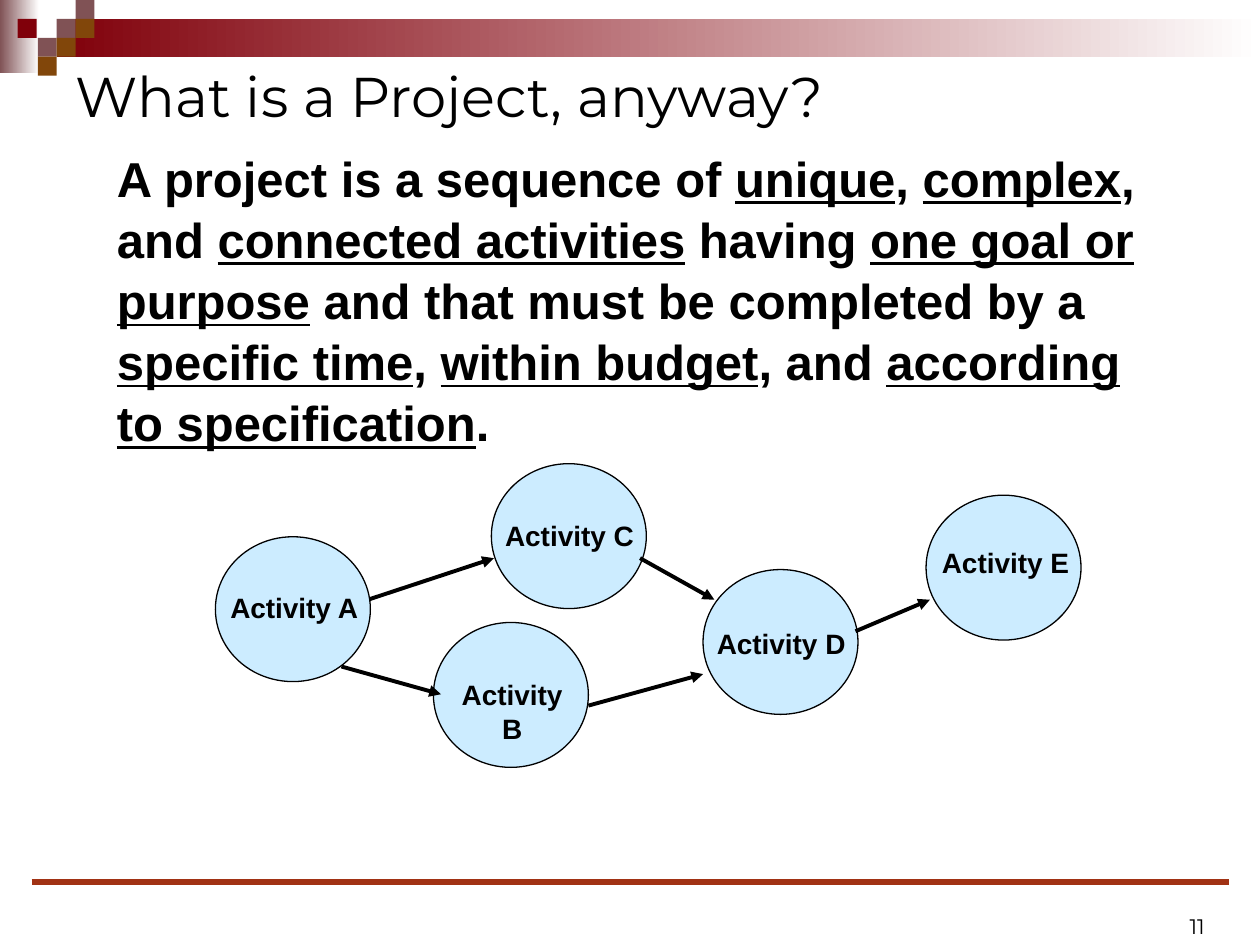
from typing import NamedTuple

from lxml.etree import SubElement
from pptx import Presentation
from pptx.dml.color import RGBColor
from pptx.enum.shapes import MSO_CONNECTOR as Connector, MSO_SHAPE as Shape
from pptx.enum.text import MSO_ANCHOR as Anchor, PP_ALIGN as Align
from pptx.oxml.ns import qn
from pptx.util import Inches, Pt

COLORS = {
    "mauve": "805255",
    "maroon": "80000A",
    "brown": "81460A",
    "rule": "A13214",
    "bubble": "CCECFF",
    "black": "000000",
    "white": "FFFFFF",
}
TILE = 0.15
BUBBLE_WIDTH, BUBBLE_HEIGHT = 1.23, 1.15


class Box(NamedTuple):
    left: float
    top: float
    width: float
    height: float


class Tile(NamedTuple):
    left: float
    top: float
    color: str


class Activity(NamedTuple):
    letter: str
    left: float
    top: float
    label: Box


class Line(NamedTuple):
    x1: float
    y1: float
    x2: float
    y2: float


BANDS = [
    (Box(0, 0, 0.31, 0.58), "mauve"),
    (Box(0.45, 0.15, 9.55, 0.3), "maroon"),
]
TILES = [
    Tile(0.45, 0.15, "mauve"),
    Tile(0.6, 0, "mauve"),
    Tile(0.6, 0.15, "brown"),
    Tile(0.3, 0.3, "mauve"),
    Tile(0.14, 0.15, "maroon"),
    Tile(0.45, 0.3, "brown"),
    Tile(0.3, 0.45, "brown"),
]
ACTIVITIES = [
    Activity("A", 1.71, 4.26, Box(1.67, 4.64, 1.33, 0.37)),
    Activity("C", 3.9, 3.68, Box(3.85, 4.07, 1.34, 0.37)),
    Activity("B", 3.44, 4.94, Box(3.46, 5.33, 1.21, 0.64)),
    Activity("D", 5.58, 4.52, Box(5.58, 4.92, 1.24, 0.37)),
    Activity("E", 7.35, 3.93, Box(7.37, 4.28, 1.22, 0.37)),
]
FIRST_ARROW = Line(2.92, 4.76, 3.92, 4.43)
OTHER_ARROWS = [
    Line(2.71, 5.29, 3.5, 5.51),
    Line(5.08, 4.43, 5.67, 4.76),
    Line(4.67, 5.6, 5.58, 5.35),
    Line(6.79, 5.01, 7.38, 4.76),
]
DEFINITION = [
    "A project is a sequence of ", "unique", ", ", "complex", ", and ",
    "connected activities", " having ", "one goal or purpose",
    " and that must be completed by a ", "specific time", ", ",
    "within budget", ", and ", "according to specification", ".",
]


def rgb(name: str) -> RGBColor:
    """Return a named colour."""
    return RGBColor.from_string(COLORS[name])


def add_plain(page, kind, box: Box, color: str):
    """Add a filled shape without line or shadow."""
    shape = page.shapes.add_shape(kind, *map(Inches, box))
    shape.shadow.inherit = False
    shape.fill.solid()
    shape.fill.fore_color.rgb = rgb(color)
    shape.line.fill.background()
    return shape


def add_band(page, box: Box, color: str) -> None:
    """Add a rectangle fading from a colour to white."""
    band = add_plain(page, Shape.RECTANGLE, box, color)
    band.fill.gradient()
    band.fill.gradient_angle = 0
    for stop, name, position in zip(band.fill.gradient_stops, (color, "white"), (0, 1)):
        stop.color.rgb = rgb(name)
        stop.position = position


def add_line(page, line: Line, color: str, width: float, arrow: bool = False) -> None:
    """Add a straight line, with an arrowhead at its end if asked."""
    connector = page.shapes.add_connector(Connector.STRAIGHT, *map(Inches, line))
    connector.line.color.rgb = rgb(color)
    connector.line.width = Pt(width)
    if arrow:
        SubElement(connector.line._get_or_add_ln(), qn("a:tailEnd"), type="triangle")
    SubElement(connector._element.spPr, qn("a:effectLst"))


def add_text(page, box: Box, spans: list[str], size: float, font: str = "Arial",
             bold: bool = False, align=Align.LEFT, anchor=Anchor.TOP):
    """Add a paragraph whose every second span is underlined."""
    frame = page.shapes.add_textbox(*map(Inches, box)).text_frame
    frame.word_wrap = True
    frame.vertical_anchor = anchor
    para = frame.paragraphs[0]
    para.alignment = align
    para.font.name = font
    para.font.size = Pt(size)
    para.font.bold = bold
    para.font.color.rgb = rgb("black")
    for index, text in enumerate(spans):
        span = para.add_run()
        span.text = text
        if index % 2:
            span.font.underline = True
    return para


def add_activity(page, activity: Activity) -> None:
    """Add a labelled activity bubble."""
    box = Box(activity.left, activity.top, BUBBLE_WIDTH, BUBBLE_HEIGHT)
    bubble = add_plain(page, Shape.OVAL, box, "bubble")
    bubble.line.color.rgb = rgb("black")
    bubble.line.width = Pt(0.75)
    add_text(page, activity.label, [f"Activity {activity.letter}"], 16,
             bold=True, align=Align.CENTER)


def main() -> None:
    """Build the project definition slide."""
    deck = Presentation()
    deck.slide_width, deck.slide_height = Inches(10), Inches(7.5)
    page = deck.slides.add_slide(deck.slide_layouts[6])
    for box, color in BANDS:
        add_band(page, box, color)
    for tile in TILES:
        add_plain(page, Shape.RECTANGLE, Box(tile.left, tile.top, TILE, TILE), tile.color)
    add_line(page, Line(0.25, 7, 9.75, 7), "rule", 3)
    add_text(page, Box(7.33, 7, 2.33, 0.5), ["11"], 12, "Montserrat",
             align=Align.RIGHT, anchor=Anchor.BOTTOM)
    add_text(page, Box(0.5, 0.42, 9, 0.67), ["What is a Project, anyway?"], 32,
             "Montserrat", anchor=Anchor.MIDDLE)
    definition = add_text(page, Box(0.83, 1.11, 8.42, 2.44), DEFINITION, 28, bold=True)
    definition.line_spacing = 1.04
    add_line(page, FIRST_ARROW, "black", 2.25, arrow=True)
    for activity in ACTIVITIES:
        add_activity(page, activity)
    for arrow in OTHER_ARROWS:
        add_line(page, arrow, "black", 2.25, arrow=True)
    deck.save("out.pptx")


if __name__ == "__main__":
    main()
